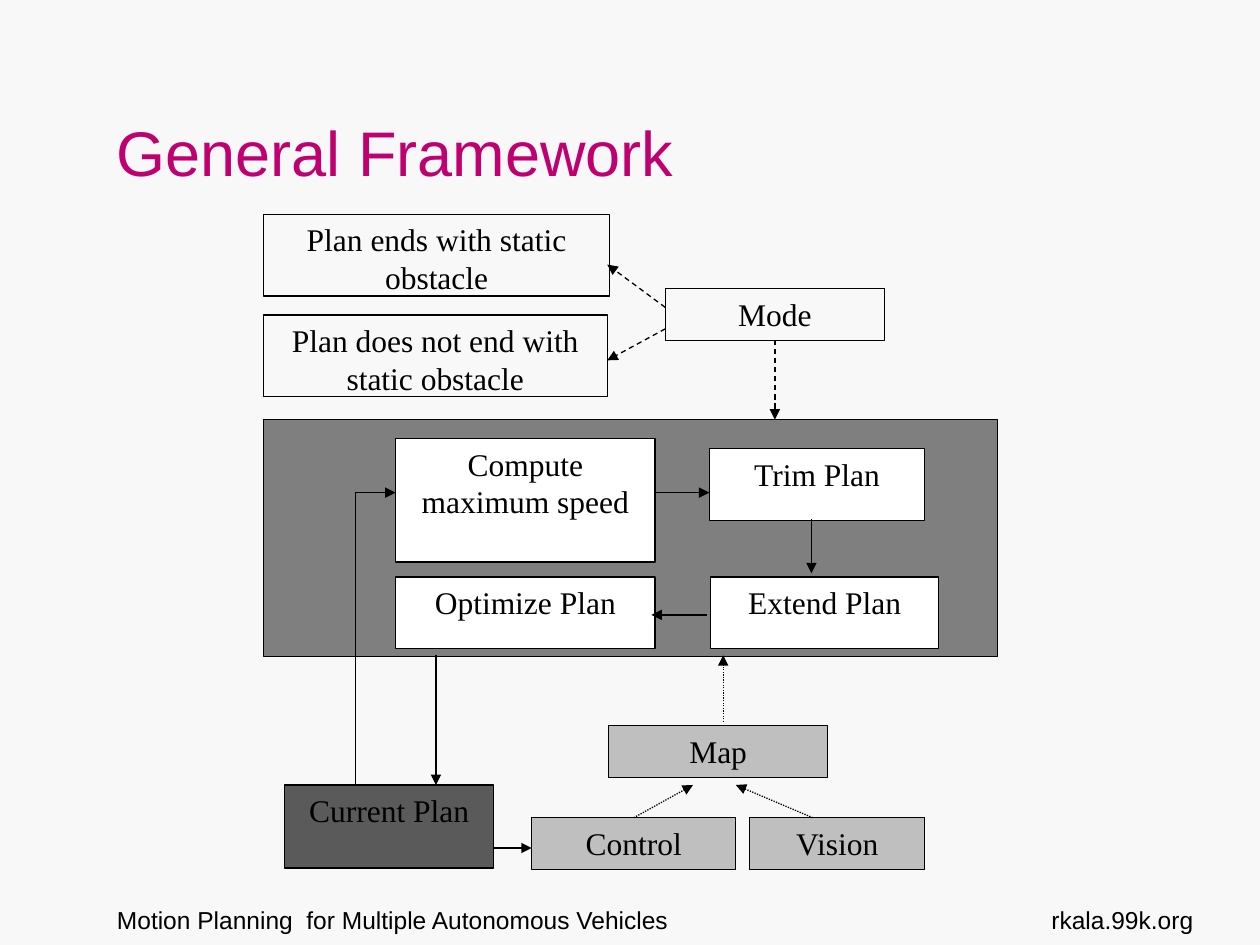
"""Build the General Framework slide: boxes of the planner and the arrows between them."""
from dataclasses import dataclass
from typing import Optional

import lxml.etree
import pptx
import pptx.dml.color
import pptx.enum.dml
import pptx.enum.shapes
import pptx.enum.text
import pptx.oxml.ns
import pptx.util

RGB = pptx.dml.color.RGBColor
ALIGN = pptx.enum.text.PP_ALIGN
ANCHOR = pptx.enum.text.MSO_ANCHOR
DASH = pptx.enum.dml.MSO_LINE.DASH
DOT = pptx.enum.dml.MSO_LINE.ROUND_DOT

SCALE = 9144
BACK = RGB(0xF8, 0xF8, 0xF8)
PINK = RGB(0xBF, 0x00, 0x71)
BLACK = RGB(0x00, 0x00, 0x00)
WHITE = RGB(0xFF, 0xFF, 0xFF)
LIGHT = RGB(0xBF, 0xBF, 0xBF)
GREY = RGB(0x7F, 0x7F, 0x7F)
DARK = RGB(0x5A, 0x5A, 0x5A)


@dataclass
class Box:
    text: str
    left: int
    top: int
    width: int
    height: int
    fill: Optional[RGB] = None


@dataclass
class Link:
    x1: int
    y1: int
    x2: int
    y2: int
    dash: Optional[pptx.enum.dml.MSO_LINE] = None
    head: bool = True
    start: Optional[str] = None
    side: int = 0


BOXES = [
    Box("", 209, 333, 583, 188, GREY),
    Box("Vision", 595, 649, 139, 41, LIGHT),
    Box("Map", 483, 576, 174, 41, LIGHT),
    Box("Control", 422, 649, 162, 41, LIGHT),
    Box("Current Plan", 226, 623, 166, 66, DARK),
    Box("Trim Plan", 563, 356, 171, 57, WHITE),
    Box("Extend Plan", 564, 458, 181, 57, WHITE),
    Box("Optimize Plan", 314, 458, 206, 57, WHITE),
    Box("Compute maximum speed", 314, 348, 206, 98, WHITE),
    Box("Mode", 528, 229, 174, 41),
    Box("Plan ends with static obstacle", 209, 170, 275, 65),
    Box("Plan does not end with static obstacle", 209, 250, 273, 65),
]

LINKS = [
    Link(392, 673, 422, 673),
    Link(282, 391, 314, 391),
    Link(282, 391, 282, 623, head=False),
    Link(519, 391, 563, 391),
    Link(644, 412, 644, 455),
    Link(561, 488, 517, 488),
    Link(346, 520, 346, 623),
    Link(503, 649, 550, 623, DOT, start="Control", side=0),
    Link(574, 573, 574, 520, DOT),
    Link(645, 649, 584, 623, DOT),
    Link(615, 270, 615, 333, DASH, start="Mode", side=2),
    Link(528, 244, 482, 210, DASH),
    Link(528, 261, 482, 286, DASH),
]


def px(*nums: int) -> list[pptx.util.Emu]:
    return [pptx.util.Emu(num * SCALE) for num in nums]


def write(shape, text: str, size: int = 18, font: str = "Times New Roman",
          color: RGB = BLACK, align=ALIGN.CENTER, anchor=ANCHOR.TOP,
          wrap: bool = True) -> None:
    frame = shape.text_frame
    frame.word_wrap = wrap
    frame.vertical_anchor = anchor
    para = frame.paragraphs[0]
    para.alignment = align
    run = para.add_run()
    run.text = text
    run.font.size = pptx.util.Pt(size)
    run.font.name = font
    run.font.color.rgb = color


def label(slide, box: Box, **form) -> None:
    shape = slide.shapes.add_textbox(*px(box.left, box.top, box.width, box.height))
    write(shape, box.text, font="Arial", **form)


def stroke(line) -> None:
    line.color.rgb = BLACK
    line.width = pptx.util.Pt(0.75)


def draw_box(slide, box: Box):
    kind = pptx.enum.shapes.MSO_SHAPE.RECTANGLE
    shape = slide.shapes.add_shape(kind, *px(box.left, box.top, box.width, box.height))
    shape.shadow.inherit = False
    if box.fill is None:
        shape.fill.background()
    else:
        shape.fill.solid()
        shape.fill.fore_color.rgb = box.fill
    stroke(shape.line)
    if box.text:
        write(shape, box.text)
    return shape


def draw_link(slide, link: Link, shapes: dict) -> None:
    kind = pptx.enum.shapes.MSO_CONNECTOR.STRAIGHT
    wire = slide.shapes.add_connector(kind, *px(link.x1, link.y1, link.x2, link.y2))
    if link.start:
        wire.begin_connect(shapes[link.start], link.side)
    stroke(wire.line)
    if link.dash is not None:
        wire.line.dash_style = link.dash
    qn = pptx.oxml.ns.qn
    props = wire._element.spPr
    if link.head:
        lxml.etree.SubElement(props.find(qn("a:ln")), qn("a:tailEnd"), type="triangle")
    lxml.etree.SubElement(props, qn("a:effectLst"))


def main() -> None:
    deck = pptx.Presentation()
    deck.slide_width, deck.slide_height = px(1000, 750)
    slide = deck.slides.add_slide(deck.slide_layouts[6])
    slide.background.fill.solid()
    slide.background.fill.fore_color.rgb = BACK

    label(slide, Box("Motion Planning  for Multiple Autonomous Vehicles", 83, 713, 693, 52),
          size=14, align=ALIGN.LEFT)
    label(slide, Box("General Framework", 83, 30, 677, 125),
          size=36, color=PINK, align=ALIGN.LEFT, anchor=ANCHOR.BOTTOM, wrap=False)
    label(slide, Box("rkala.99k.org", 807, 713, 150, 52), size=14, align=ALIGN.RIGHT)

    shapes = {box.text: draw_box(slide, box) for box in BOXES}
    for link in LINKS:
        draw_link(slide, link, shapes)
    deck.save("out.pptx")


if __name__ == "__main__":
    main()
